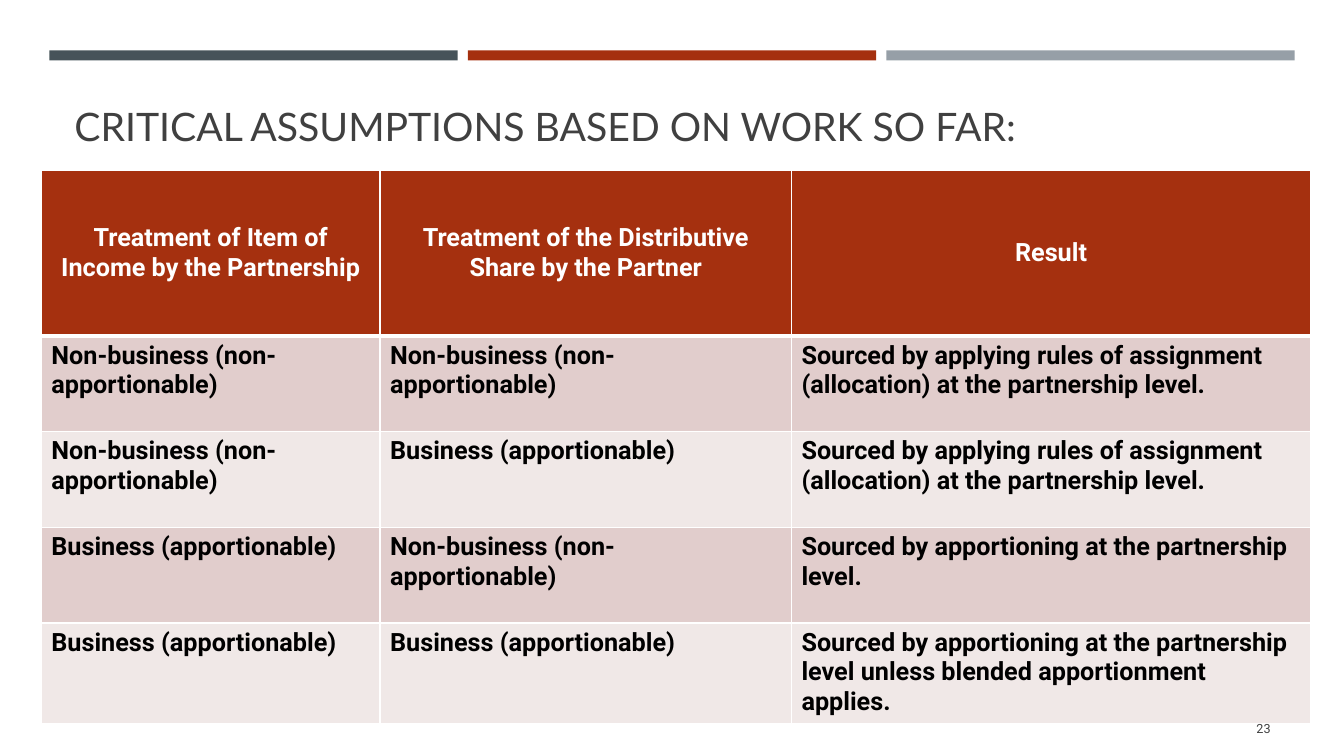
from lxml.etree import SubElement
from pptx import Presentation
from pptx.dml.color import RGBColor
from pptx.enum.shapes import MSO_SHAPE
from pptx.enum.text import MSO_ANCHOR, PP_ALIGN
from pptx.oxml.ns import qn
from pptx.util import Inches, Pt

SLATE = RGBColor(0x46, 0x53, 0x59)
RUST = RGBColor(0xA5, 0x30, 0x0F)
GREY = RGBColor(0x96, 0x9F, 0xA7)
INK = RGBColor(0x40, 0x40, 0x40)
BLACK = RGBColor(0, 0, 0)
WHITE = RGBColor(0xFF, 0xFF, 0xFF)
ROSE = RGBColor(0xE1, 0xCD, 0xCC)
PALE_ROSE = RGBColor(0xF0, 0xE8, 0xE7)

BAR_LEFT, BAR_TOP, BAR_WIDTH, BAR_HEIGHT, BAR_PITCH = 0.49, 0.5, 4.05, 0.1, 4.15
COLUMN_WIDTHS = (3.36, 4.08, 5.15)
HEADER_HEIGHT, ROW_HEIGHT = 1.64, 0.95

NON_BUSINESS = "Non-business (non-apportionable)"
BUSINESS = "Business (apportionable)"
ALLOCATED = "Sourced by applying rules of assignment (allocation) at the partnership level."
HEADINGS = (
    "Treatment of Item of Income by the Partnership",
    "Treatment of the Distributive Share by the Partner",
    "Result",
)
ASSUMPTIONS = (
    (NON_BUSINESS, NON_BUSINESS, ALLOCATED),
    (NON_BUSINESS, BUSINESS, ALLOCATED),
    (BUSINESS, NON_BUSINESS, "Sourced by apportioning at the partnership level."),
    (BUSINESS, BUSINESS, "Sourced by apportioning at the partnership level "
                         "unless blended apportionment applies."),
)


def write(frame, text, *, size, color, font="Roboto", bold=False, align=PP_ALIGN.LEFT):
    """Put one formatted paragraph into a text frame."""
    paragraph = frame.paragraphs[0]
    paragraph.alignment = align
    run = paragraph.add_run()
    run.text = text
    run.font.name = font
    run.font.size = Pt(size)
    run.font.bold = bold
    run.font.color.rgb = color


def add_label(slide, box, text, anchor, **text_format):
    """Add a wrapped text box at the given left, top, width and height."""
    frame = slide.shapes.add_textbox(*map(Inches, box)).text_frame
    frame.word_wrap = True
    frame.vertical_anchor = anchor
    write(frame, text, **text_format)


def add_bars(slide):
    """Draw the three coloured bars along the top."""
    for position, color in enumerate((SLATE, RUST, GREY)):
        bar = slide.shapes.add_shape(
            MSO_SHAPE.RECTANGLE, Inches(BAR_LEFT + position * BAR_PITCH),
            Inches(BAR_TOP), Inches(BAR_WIDTH), Inches(BAR_HEIGHT))
        bar.shadow.inherit = False
        bar.fill.solid()
        bar.fill.fore_color.rgb = color
        bar.line.fill.background()


def set_borders(cell, top, bottom):
    """Give a cell white borders, one point wide at the sides."""
    properties = cell._tc.get_or_add_tcPr()
    for side, width in (("L", 1), ("R", 1), ("T", top), ("B", bottom)):
        border = SubElement(properties, qn(f"a:ln{side}"), w=str(Pt(width)))
        fill = SubElement(border, qn("a:solidFill"))
        SubElement(fill, qn("a:srgbClr"), val=str(WHITE))


def fill_row(table, row, texts, fill, anchor, borders, **text_format):
    """Style and fill the cells of one table row."""
    for column, text in enumerate(texts):
        cell = table.cell(row, column)
        set_borders(cell, *borders)
        cell.fill.solid()
        cell.fill.fore_color.rgb = fill
        cell.vertical_anchor = anchor
        write(cell.text_frame, text, size=18, bold=True, **text_format)


def add_assumptions(slide):
    """Add the table of treatments and results."""
    heights = [HEADER_HEIGHT] + [ROW_HEIGHT] * len(ASSUMPTIONS)
    table = slide.shapes.add_table(
        len(heights), len(COLUMN_WIDTHS), Inches(0.41), Inches(1.69),
        Inches(sum(COLUMN_WIDTHS)), Inches(sum(heights))).table
    for column, width in zip(table.columns, COLUMN_WIDTHS):
        column.width = Inches(width)
    for row, height in zip(table.rows, heights):
        row.height = Inches(height)
    fill_row(table, 0, HEADINGS, RUST, MSO_ANCHOR.MIDDLE, (1, 3),
             color=WHITE, align=PP_ALIGN.CENTER)
    for number, texts in enumerate(ASSUMPTIONS, 1):
        fill_row(table, number, texts, ROSE if number % 2 else PALE_ROSE,
                 MSO_ANCHOR.TOP, (3 if number == 1 else 1, 1), color=BLACK)


def main():
    """Build the slide and save it."""
    deck = Presentation()
    deck.slide_width, deck.slide_height = Inches(13.33), Inches(7.5)
    slide = deck.slides.add_slide(deck.slide_layouts[6])
    add_bars(slide)
    add_label(slide, (0.64, 0.77, 12.06, 0.76),
              "CRITICAL ASSUMPTIONS BASED ON WORK SO FAR:", MSO_ANCHOR.BOTTOM,
              size=28, color=INK, font="Lato")
    add_assumptions(slide)
    add_label(slide, (11.55, 7.03, 1.15, 0.4), "23", MSO_ANCHOR.MIDDLE,
              size=9, color=INK, align=PP_ALIGN.RIGHT)
    deck.save("out.pptx")


if __name__ == "__main__":
    main()
